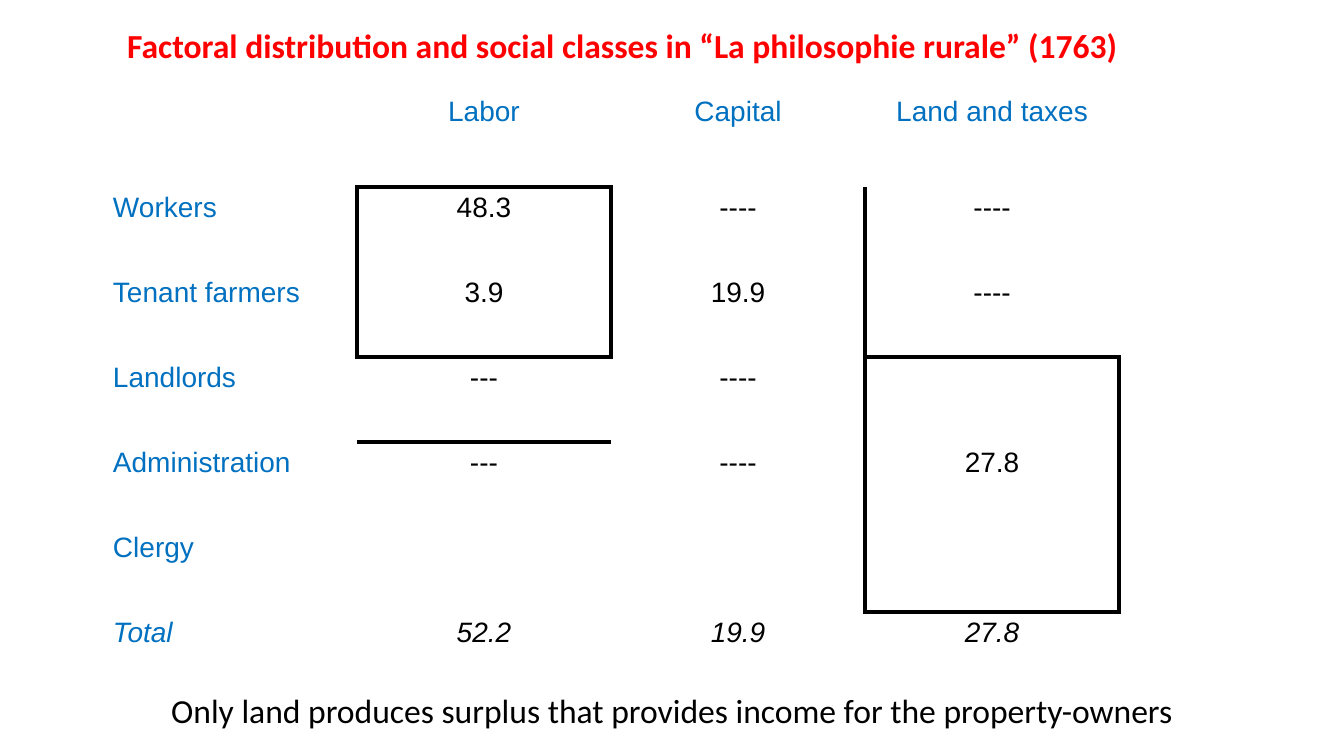
"""Build the slide on factoral distribution and social classes."""
from lxml import etree
from pptx import Presentation
from pptx import util as u
from pptx.dml.color import RGBColor
from pptx.enum import text
from pptx.oxml.ns import qn

PX = 9525
THEME = {
    "title": "FF0000", "label": "0070C0", "ink": "000000",
    "heading_font": "Calibri", "table_font": "Arial",
    "heading_pt": 24, "table_pt": 20, "border_pt": 3,
}
HEADING = {"font": THEME["heading_font"], "size": THEME["heading_pt"]}


def write(tf, content, font=THEME["table_font"], size=THEME["table_pt"], color=THEME["ink"],
          bold=False, italic=False, align=text.PP_ALIGN.CENTER, before=0):
    p = tf.paragraphs[0]
    p.alignment = align
    p.space_before = u.Pt(before)
    r = p.add_run()
    r.text = content
    r.font.name, r.font.size = font, u.Pt(size)
    r.font.bold, r.font.italic = bold, italic
    r.font.color.rgb = RGBColor.from_string(color)


def set_border(cell, side, visible):
    ln = etree.Element(qn(f"a:ln{side}"), w=str(u.Pt(THEME["border_pt"])))
    if visible:
        fill = etree.SubElement(ln, qn("a:solidFill"))
        etree.SubElement(fill, qn("a:srgbClr"), val=THEME["ink"])
    else:
        etree.SubElement(ln, qn("a:noFill"))
    cell._tc.get_or_add_tcPr().append(ln)


prs = Presentation()
prs.slide_width, prs.slide_height = 1280 * PX, 720 * PX
s = prs.slides.add_slide(prs.slide_layouts[5])

title = s.shapes.title
title.left, title.top, title.width, title.height = (n * PX for n in (97, 19, 992, 48))
title.text_frame.word_wrap = True
title.text_frame.auto_size = text.MSO_AUTO_SIZE.NONE
title.text_frame.vertical_anchor = text.MSO_ANCHOR.TOP
write(title.text_frame, "Factoral distribution and social classes in “La philosophie rurale” (1763)",
      color=THEME["title"], bold=True, **HEADING)

rows = [
    ["", "Labor", "Capital", "Land and taxes"],
    ["Workers", "48.3", "----", "----"],
    ["Tenant farmers", "3.9", "19.9", "----"],
    ["Landlords", "---", "----", "27.8"],
    ["Administration", "---", "----", ""],
    ["Clergy", "", "", ""],
    ["Total", "52.2", "19.9", "27.8"],
]
total_row = len(rows) - 1
table = s.shapes.add_table(len(rows), 4, 98 * PX, 87 * PX, 968 * PX, 577 * PX).table
table.first_row = table.horz_banding = False
for i, row in enumerate(table.rows):
    row.height = (91 if i == 0 else 81) * PX

horizontal = {(1, 1), (3, 1), (4, 1), (3, 3), (6, 3)}
vertical = {(i, j) for i in (1, 2) for j in (1, 2)} | {(i, 3) for i in range(1, 6)}
vertical |= {(i, 4) for i in range(3, 6)}

for i, values in enumerate(rows):
    for j, value in enumerate(values):
        cell = table.cell(i, j)
        edges = {"L": (i, j) in vertical, "R": (i, j + 1) in vertical,
                 "T": (i, j) in horizontal, "B": (i + 1, j) in horizontal}
        for side, visible in edges.items():
            set_border(cell, side, visible)
        cell.fill.background()
        if value:
            write(cell.text_frame, value, before=8, italic=i == total_row,
                  color=THEME["label"] if i == 0 or j == 0 else THEME["ink"],
                  align=text.PP_ALIGN.LEFT if j == 0 else text.PP_ALIGN.CENTER)

surplus = table.cell(3, 3)
surplus.merge(table.cell(5, 3))
surplus.vertical_anchor = text.MSO_ANCHOR.MIDDLE
surplus.margin_top, surplus.margin_bottom = 0, 42 * PX

caption = s.shapes.add_textbox(144 * PX, 652 * PX, 992 * PX, 48 * PX)
caption.text_frame.word_wrap = True
write(caption.text_frame, "Only land produces surplus that provides income for the property-owners",
      **HEADING)

prs.save("out.pptx")
